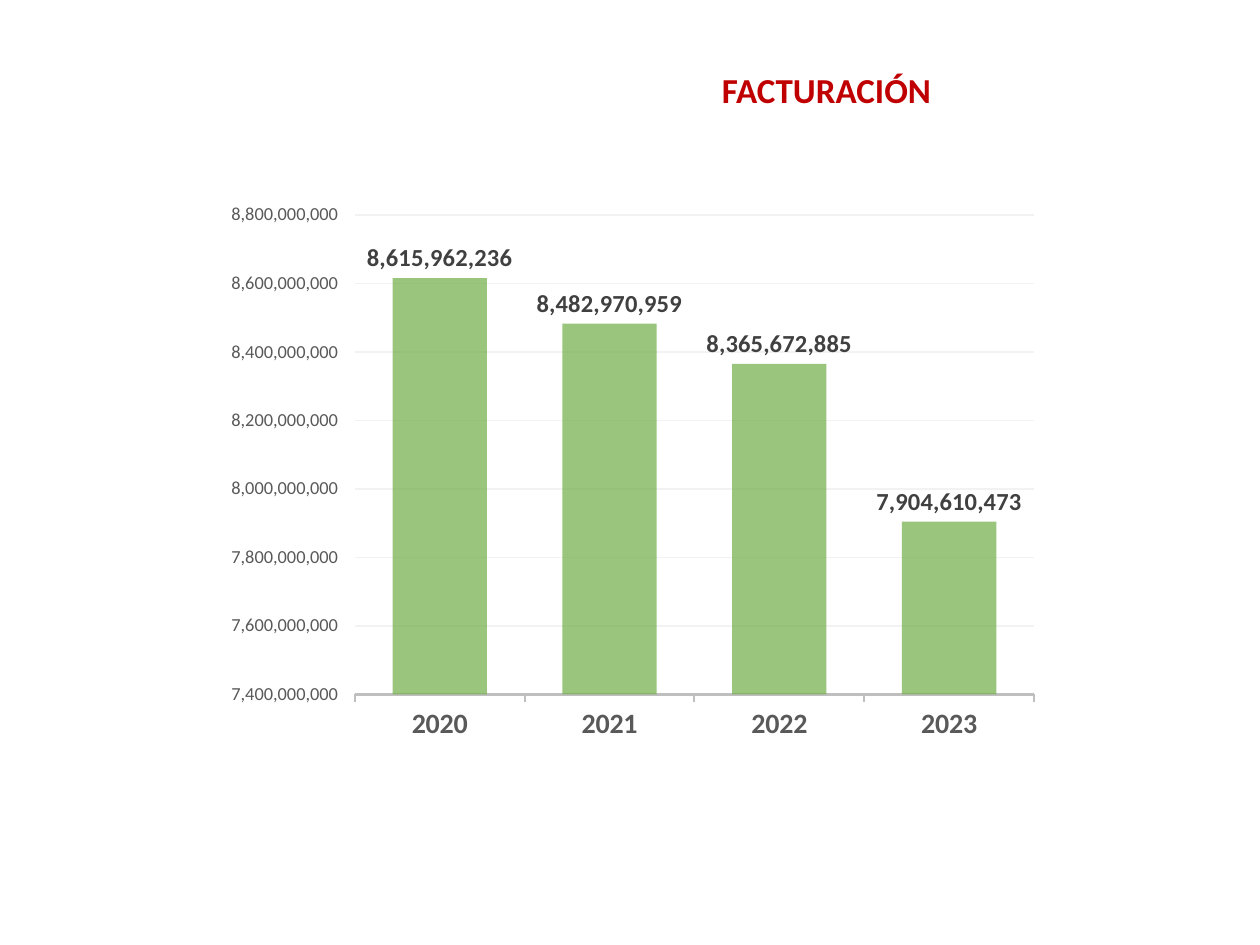
from dataclasses import dataclass

from lxml import etree
from pptx import Presentation
from pptx.chart.data import CategoryChartData
from pptx.dml.color import RGBColor
from pptx.enum.chart import XL_CHART_TYPE, XL_LABEL_POSITION, XL_TICK_MARK
from pptx.enum.text import MSO_ANCHOR, PP_ALIGN
from pptx.oxml.ns import qn
from pptx.util import Inches, Pt

COLUMNS = XL_CHART_TYPE.COLUMN_CLUSTERED
OUTSIDE_END = XL_LABEL_POSITION.OUTSIDE_END
TICK_OUTSIDE = XL_TICK_MARK.OUTSIDE
TICK_NONE = XL_TICK_MARK.NONE
MIDDLE = MSO_ANCHOR.MIDDLE
CENTER = PP_ALIGN.CENTER


@dataclass(frozen=True)
class Theme:
    font: str = "Calibri"
    background: str = "FFFFFF"
    title: str = "C00000"
    bar: str = "70AD47"
    bar_opacity: int = 70
    label: str = "404040"
    axis_text: str = "595959"
    axis_line: str = "BFBFBF"
    grid: str = "F2F2F2"
    title_size: float = 20
    category_size: float = 16
    label_size: float = 14
    value_size: float = 10.5


THEME = Theme()
NUMBER_FORMAT = '_-* #,##0_-;\\-* #,##0_-;_-* "-"??_-;_-@_'
BILLING = {
    "2020": 8615962236,
    "2021": 8482970959,
    "2022": 8365672885,
    "2023": 7904610473,
}


def style_font(font, size, color, bold=False):
    font.name = THEME.font
    font.size = Pt(size)
    font.bold = bold
    font.color.rgb = RGBColor.from_string(color)


def style_line(line, color, width):
    line.color.rgb = RGBColor.from_string(color)
    line.width = Pt(width)


def add_text(slide, text, box, *, size, color, bold=False, align=CENTER,
             anchor=MIDDLE, line_spacing=1.0):
    shape = slide.shapes.add_textbox(*box)
    frame = shape.text_frame
    frame.word_wrap = True
    frame.vertical_anchor = anchor
    paragraph = frame.paragraphs[0]
    paragraph.alignment = align
    paragraph.line_spacing = line_spacing
    run = paragraph.add_run()
    run.text = text
    style_font(run.font, size, color, bold)


def add_title(slide, box):
    add_text(slide, "FACTURACIÓN", box, size=THEME.title_size,
             color=THEME.title, bold=True, line_spacing=0.9)


def style_axes(chart):
    # Years
    category_axis = chart.category_axis
    category_axis.major_tick_mark = TICK_OUTSIDE
    category_axis.minor_tick_mark = TICK_NONE
    category_axis.has_major_gridlines = False
    style_line(category_axis.format.line, THEME.axis_line, 1.25)
    style_font(category_axis.tick_labels.font, THEME.category_size,
               THEME.axis_text, bold=True)

    # Amounts
    value_axis = chart.value_axis
    value_axis.minimum_scale = 7_400_000_000
    value_axis.maximum_scale = 8_800_000_000
    value_axis.major_unit = 200_000_000
    value_axis.major_tick_mark = TICK_OUTSIDE
    value_axis.minor_tick_mark = TICK_NONE
    value_axis.format.line.fill.background()
    value_axis.has_major_gridlines = True
    style_line(value_axis.major_gridlines.format.line, THEME.grid, 0.75)
    value_axis.tick_labels.number_format = NUMBER_FORMAT
    value_axis.tick_labels.number_format_is_linked = False
    style_font(value_axis.tick_labels.font, THEME.value_size, THEME.axis_text)


def style_columns(plot):
    plot.gap_width = 80
    plot.overlap = 25
    plot.vary_by_categories = False
    series = plot.series[0]
    series.invert_if_negative = False

    # Translucent fill
    fill = series.format.fill
    fill.solid()
    fill.fore_color.rgb = RGBColor.from_string(THEME.bar)
    color = series.format.fill._xPr.find(".//" + qn("a:srgbClr"))
    alpha = etree.SubElement(color, qn("a:alpha"))
    alpha.set("val", str(THEME.bar_opacity * 1000))

    # Value labels
    labels = series.data_labels
    labels.show_value = True
    labels.position = OUTSIDE_END
    labels.number_format = NUMBER_FORMAT
    labels.number_format_is_linked = False
    style_font(labels.font, THEME.label_size, THEME.label, bold=True)


def add_billing_chart(slide, box):
    data = CategoryChartData(number_format=NUMBER_FORMAT)
    data.categories = list(BILLING)
    data.add_series("Series 1", list(BILLING.values()))
    chart = slide.shapes.add_chart(COLUMNS, *box, data).chart
    chart.has_legend = False
    chart.has_title = False
    style_font(chart.font, THEME.value_size, THEME.axis_text)
    style_axes(chart)
    style_columns(chart.plots[0])


def inch_box(*lengths):
    return tuple(Inches(length) for length in lengths)


def main():
    presentation = Presentation()
    presentation.slide_width = Inches(10)
    presentation.slide_height = Inches(7.5)
    slide = presentation.slides.add_slide(presentation.slide_layouts[6])
    background = slide.background.fill
    background.solid()
    background.fore_color.rgb = RGBColor.from_string(THEME.background)
    add_title(slide, inch_box(3.8, 0.4, 5.52, 0.67))
    add_billing_chart(slide, inch_box(1.67, 1.53, 6.67, 4.44))
    presentation.save("out.pptx")


if __name__ == "__main__":
    main()
